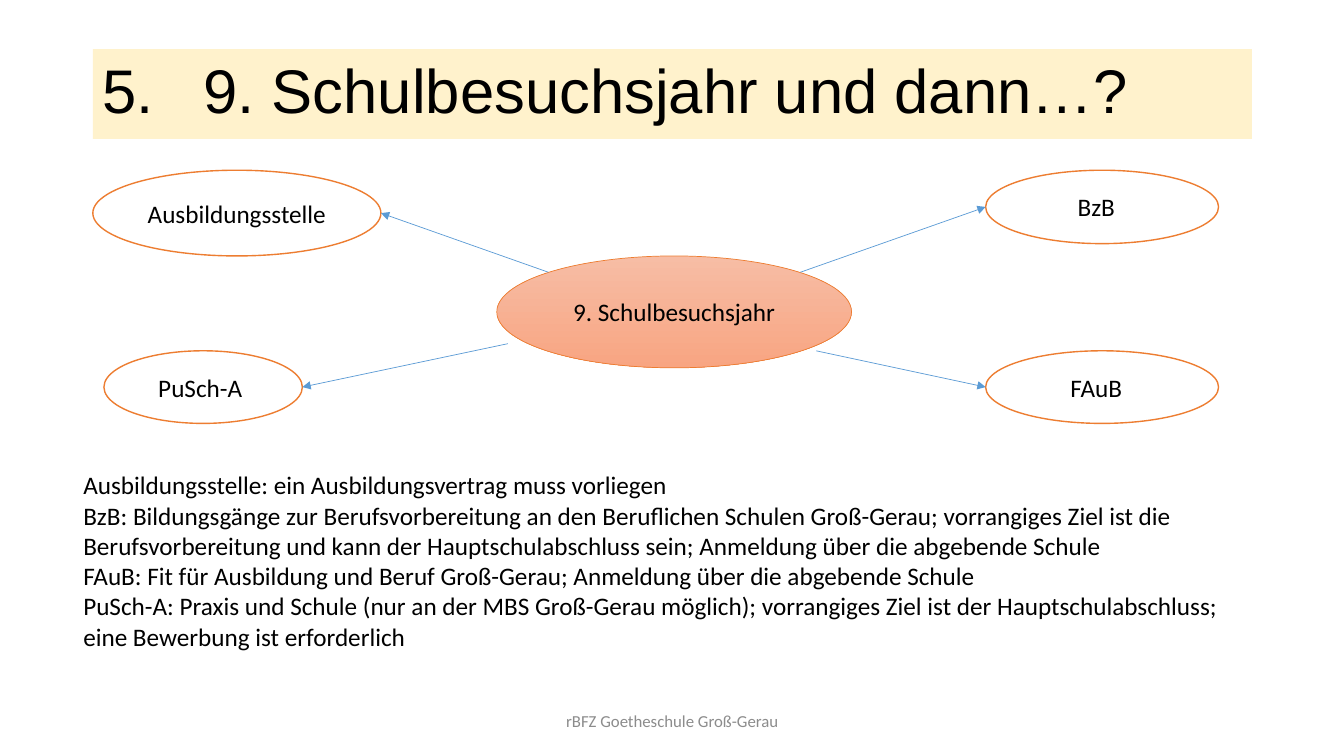
from lxml.etree import SubElement
from pptx import Presentation
from pptx.dml.color import RGBColor
from pptx.enum.shapes import MSO_CONNECTOR, MSO_SHAPE
from pptx.enum.text import MSO_ANCHOR as Anchor, PP_ALIGN as Align
from pptx.oxml.ns import qn
from pptx.util import Cm, Pt

BLACK = RGBColor(0x00, 0x00, 0x00)
WHITE = RGBColor(0xFF, 0xFF, 0xFF)
GRAY = RGBColor(0x8C, 0x8C, 0x8C)
CREAM = RGBColor(0xFF, 0xF2, 0xCC)
ORANGE = RGBColor(0xED, 0x7D, 0x31)
SALMON_LIGHT = RGBColor(0xF7, 0xBD, 0xA5)
SALMON_DARK = RGBColor(0xF8, 0xA5, 0x82)
BLUE = RGBColor(0x5B, 0x9B, 0xD5)

TITLE = "5. \t9. Schulbesuchsjahr und dann…?"
FOOTER = "rBFZ Goetheschule Groß-Gerau"
EXPLANATIONS = [
    "Ausbildungsstelle: ein Ausbildungsvertrag muss vorliegen",
    "BzB: Bildungsgänge zur Berufsvorbereitung an den Beruflichen Schulen Groß-Gerau; "
    "vorrangiges Ziel ist die Berufsvorbereitung und kann der Hauptschulabschluss sein; "
    "Anmeldung über die abgebende Schule",
    "FAuB: Fit für Ausbildung und Beruf Groß-Gerau; Anmeldung über die abgebende Schule",
    "PuSch-A: Praxis und Schule (nur an der MBS Groß-Gerau möglich); vorrangiges Ziel "
    "ist der Hauptschulabschluss; eine Bewerbung ist erforderlich",
]

# label, box (left, top, width, height), extra right inset, arrow start; all in cm
OPTIONS = [
    ("Ausbildungsstelle", (2.34, 4.29, 7.26, 2.16), 0, (13.82, 6.86)),
    ("BzB", (24.84, 4.29, 5.87, 1.85), 0.29, (20.17, 6.86)),
    ("FAuB", (24.84, 8.84, 5.87, 1.83), 0.29, (20.57, 8.84)),
    ("PuSch-A", (2.62, 8.84, 5, 1.83), 0.14, (12.8, 8.66)),
]


def write(frame, text, size=18, font="Calibri", color=BLACK,
          align=Align.CENTER, anchor=Anchor.MIDDLE):
    frame.text = text
    frame.word_wrap = True
    frame.vertical_anchor = anchor
    for paragraph in frame.paragraphs:
        paragraph.alignment = align
        for run in paragraph.runs:
            run.font.size = Pt(size)
            run.font.name = font
            run.font.color.rgb = color


def add_text(slide, box, text, **style):
    textbox = slide.shapes.add_textbox(*map(Cm, box))
    write(textbox.text_frame, text, **style)


def add_title(slide):
    banner = slide.shapes.add_shape(
        MSO_SHAPE.RECTANGLE, Cm(2.34), Cm(1.24), Cm(29.21), Cm(2.26))
    banner.shadow.inherit = False
    banner.fill.solid()
    banner.fill.fore_color.rgb = CREAM
    banner.line.fill.background()
    write(banner.text_frame, TITLE, size=44, font="Arial", align=Align.LEFT)
    banner.text_frame.paragraphs[0].line_spacing = 0.9


def add_ellipse(slide, box, label, line_width, extra_inset=0):
    """Add a white, orange-rimmed ellipse; extra_inset moves its label left."""
    ellipse = slide.shapes.add_shape(MSO_SHAPE.OVAL, *map(Cm, box))
    ellipse.shadow.inherit = False
    ellipse.fill.solid()
    ellipse.fill.fore_color.rgb = WHITE
    ellipse.line.color.rgb = ORANGE
    ellipse.line.width = Pt(line_width)
    write(ellipse.text_frame, label)
    ellipse.text_frame.margin_right += Cm(extra_inset)
    return ellipse


def add_center(slide):
    center = add_ellipse(slide, (12.52, 6.45, 8.94, 2.82), "9. Schulbesuchsjahr", 0.5)
    center.fill.gradient()
    center.fill.gradient_angle = 270
    for stop, color in zip(center.fill.gradient_stops, (SALMON_LIGHT, SALMON_DARK)):
        stop.color.rgb = color


def add_arrow(slide, start, end):
    arrow = slide.shapes.add_connector(
        MSO_CONNECTOR.STRAIGHT, *map(Cm, (*start, *end)))
    arrow.line.color.rgb = BLUE
    arrow.line.width = Pt(0.5)
    properties = arrow._element.spPr
    SubElement(properties.find(qn("a:ln")), qn("a:tailEnd"), type="triangle")
    SubElement(properties, qn("a:effectLst"))


def inner_side(box, start):
    """Return the middle of the box side that faces the arrow's start."""
    left, top, width, height = box
    return (left if start[0] < left else left + width), top + height / 2


def main():
    presentation = Presentation()
    presentation.slide_width = Cm(33.87)
    presentation.slide_height = Cm(19.05)
    slide = presentation.slides.add_slide(presentation.slide_layouts[6])

    add_title(slide)
    add_center(slide)
    for label, box, extra_inset, start in OPTIONS:
        add_ellipse(slide, box, label, 1, extra_inset)
        add_arrow(slide, start, inner_side(box, start))
    add_text(slide, (11.23, 17.65, 11.43, 1.02), FOOTER, size=12, color=GRAY)
    add_text(slide, (1.85, 11.71, 29.67, 4.88), "\n".join(EXPLANATIONS),
             align=Align.LEFT, anchor=Anchor.TOP)

    presentation.save("out.pptx")


if __name__ == "__main__":
    main()
